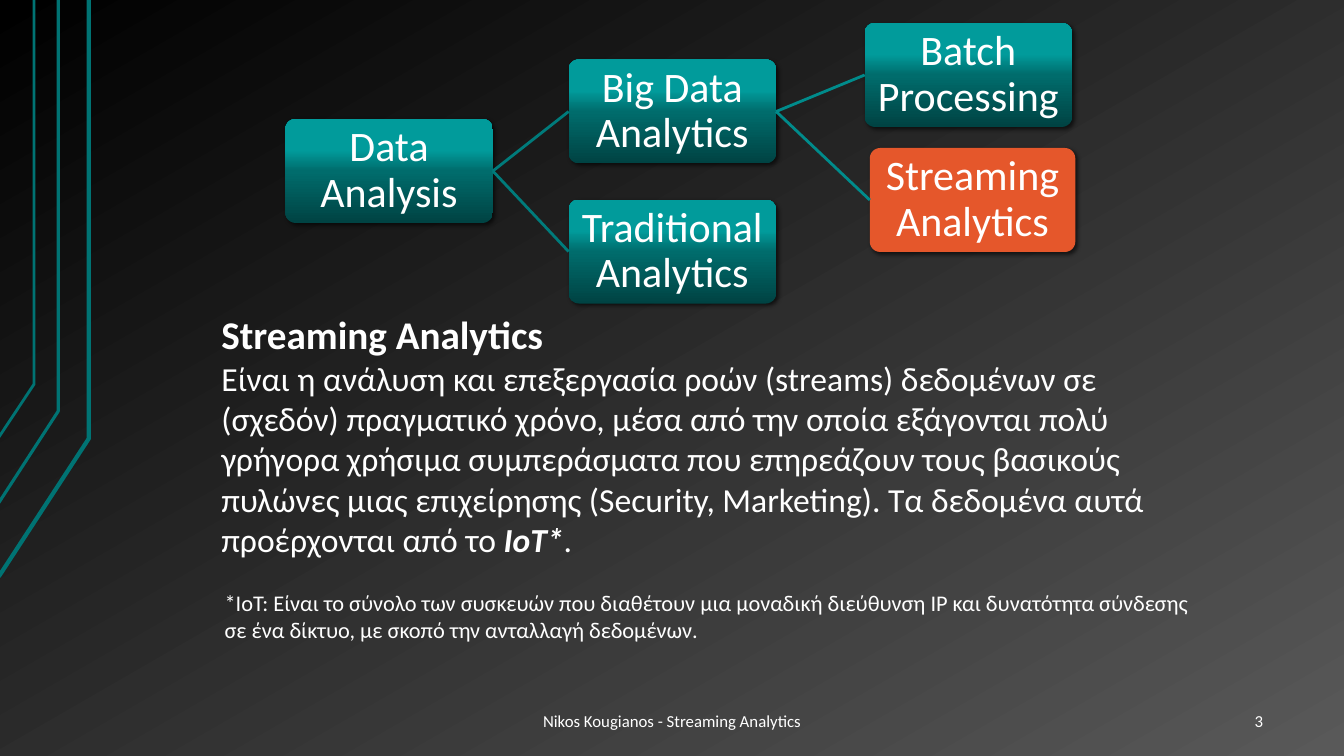
import pptx
import pptx.util
import pptx.dml.color
import pptx.enum.shapes
import pptx.enum.text
import pptx.oxml
import pptx.oxml.ns
from lxml import etree

Cm, Pt = pptx.util.Cm, pptx.util.Pt
RGB = pptx.dml.color.RGBColor.from_string
qn = pptx.oxml.ns.qn
ALIGN = pptx.enum.text.PP_ALIGN
ANCHOR = pptx.enum.text.MSO_ANCHOR

COLORS = {
    "text": "FFFFFF", "accent": "E5572B", "rail": "007373",
    "link1": "007B7B", "link2": "008B8B", "shadow": "000000",
}
BACKGROUND = [(0, "000000"), (100, "595959")]
TEAL = [(0, "004343"), (50, "006C6C"), (70, "019B9B"), (100, "009999")]


class Deck:
    def __init__(self, font):
        self.font = font
        self.prs = pptx.Presentation()
        self.prs.slide_width, self.prs.slide_height = Cm(33.87), Cm(19.05)
        self.s = self.prs.slides.add_slide(self.prs.slide_layouts[6])

    def gradient(self, fill, element, stops, angle):
        """Fill with colour stops; angle is counter-clockwise."""
        fill.gradient()
        fill.gradient_angle = angle
        stop_list = next(element.iter(qn("a:gsLst")))
        for old in list(stop_list):
            stop_list.remove(old)
        for pos, color in stops:
            gs = etree.SubElement(stop_list, qn("a:gs"), pos=str(pos * 1000))
            etree.SubElement(gs, qn("a:srgbClr"), val=color)

    def background(self, stops, angle):
        self.gradient(self.s.background.fill, self.s.element, stops, angle)

    def line(self, shape, color, width):
        shape.line.color.rgb = RGB(COLORS[color])
        shape.line.width = Pt(width)

    def rail(self, points, width):
        (x, y), *rest = [(Cm(px), Cm(py)) for px, py in points]
        builder = self.s.shapes.build_freeform(x, y)
        builder.add_line_segments(rest, close=False)
        sp = builder.convert_to_shape()
        sp.shadow.inherit = False
        sp.fill.background()
        self.line(sp, "rail", width)

    def add_runs(self, p, runs, size, align=ALIGN.LEFT):
        """Add runs given as (text, bold, italic)."""
        p.alignment = align
        for text, bold, italic in runs:
            r = p.add_run()
            r.text = text
            r.font.name, r.font.size = self.font, Pt(size)
            r.font.bold, r.font.italic = bold, italic
            r.font.color.rgb = RGB(COLORS["text"])

    def text(self, x, y, w, h, paragraphs, align=ALIGN.LEFT, anchor=ANCHOR.TOP):
        """Add a text box; paragraphs are (size, runs)."""
        tf = self.s.shapes.add_textbox(Cm(x), Cm(y), Cm(w), Cm(h)).text_frame
        tf.word_wrap = True
        tf.vertical_anchor = anchor
        for i, (size, runs) in enumerate(paragraphs):
            p = tf.add_paragraph() if i else tf.paragraphs[0]
            self.add_runs(p, runs, size, align)
        return tf

    def footer(self, x, w, text, align):
        tf = self.text(x, 17.65, w, 1.02, [(12, [(text, False, False)])],
                       align, ANCHOR.MIDDLE)
        tf.margin_left = tf.margin_right = Cm(0.33)
        tf.margin_top = tf.margin_bottom = Cm(0.18)

    def box(self, x, y, text, w=5.23, accent=False):
        sp = self.s.shapes.add_shape(
            pptx.enum.shapes.MSO_SHAPE.ROUNDED_RECTANGLE,
            Cm(x), Cm(y), Cm(w), Cm(2.62))
        sp.adjustments[0] = 0.1
        sp.line.fill.background()
        if accent:
            sp.fill.solid()
            sp.fill.fore_color.rgb = RGB(COLORS["accent"])
        else:
            self.gradient(sp.fill, sp.element, TEAL, 90)
        self.drop_shadow(sp)
        tf = sp.text_frame
        tf.word_wrap = True
        tf.vertical_anchor = ANCHOR.MIDDLE
        tf.margin_left = tf.margin_right = Cm(0.13)
        tf.margin_top = tf.margin_bottom = Cm(0.13)
        p = tf.paragraphs[0]
        p.line_spacing = 0.9
        self.add_runs(p, [(text, False, False)], 30, ALIGN.CENTER)
        return sp

    def drop_shadow(self, sp):
        sp.shadow.inherit = False
        effects = next(sp.element.iter(qn("a:effectLst")))
        outer = etree.SubElement(
            effects, qn("a:outerShdw"), blurRad=str(Pt(3)), dist=str(Pt(2)),
            dir="2700000", algn="tl", rotWithShape="0")
        color = etree.SubElement(outer, qn("a:srgbClr"), val=COLORS["shadow"])
        etree.SubElement(color, qn("a:alpha"), val="60000")

    def link(self, parent, child, color):
        c = self.s.shapes.add_connector(
            pptx.enum.shapes.MSO_CONNECTOR.STRAIGHT, 0, 0, 0, 0)
        c.begin_connect(parent, 3)
        c.end_connect(child, 1)
        self.line(c, color, 2)
        etree.SubElement(c._element.spPr, qn("a:effectLst"))


def main():
    d = Deck("Calibri")
    d.background(BACKGROUND, 300)

    # Bent lines at the left edge: x, height of the bend, start, width
    for x, bend, start, width in [(2.24, 11.05, 14.53, 3),
                                  (1.47, 10.36, 12.67, 2.25),
                                  (0.86, 9.68, 11.02, 2)]:
        d.rail([(-0.03, start), (x, bend), (x, 0)], width)

    # Tree of analytics types
    root = d.box(7.19, 3, "Data Analysis")
    big_data = d.box(14.33, 1.5, "Big Data Analytics")
    traditional = d.box(14.33, 5.03, "Traditional Analytics")
    batch = d.box(21.79, 0.58, "Batch Processing")
    streaming = d.box(21.92, 3.73, "Streaming Analytics", w=5.18, accent=True)
    for parent, children, color in [(root, (big_data, traditional), "link1"),
                                    (big_data, (batch, streaming), "link2")]:
        for child in children:
            d.link(parent, child, color)

    # Definition and footnote
    d.text(5.33, 7.7, 24.21, 6.58, [
        (28, [("Streaming Analytics", True, False)]),
        (24, [("Είναι η ανάλυση και επεξεργασία ροών (streams) δεδομένων σε "
               "(σχεδόν) πραγματικό χρόνο, μέσα από την οποία εξάγονται πολύ "
               "γρήγορα χρήσιμα συμπεράσματα που επηρεάζουν τους βασικούς "
               "πυλώνες μιας επιχείρησης (Security, Marketing). Τα δεδομένα "
               "αυτά προέρχονται από το ", False, False),
              ("ΙοΤ*", True, True), (".", False, False)]),
    ])
    d.text(5.41, 14.73, 25.12, 1.63, [
        (16, [("*ΙοΤ: Είναι το σύνολο των συσκευών που διαθέτουν μια μοναδική "
               "διεύθυνση IP και δυνατότητα σύνδεσης σε ένα δίκτυο, με σκοπό "
               "την ανταλλαγή δεδομένων.", False, False)]),
    ])

    # Footer and slide number
    d.footer(9.6, 14.68, "Nikos Kougianos - Streaming Analytics", ALIGN.CENTER)
    d.footer(29.34, 2.82, "3", ALIGN.RIGHT)

    d.prs.save("out.pptx")


if __name__ == "__main__":
    main()
